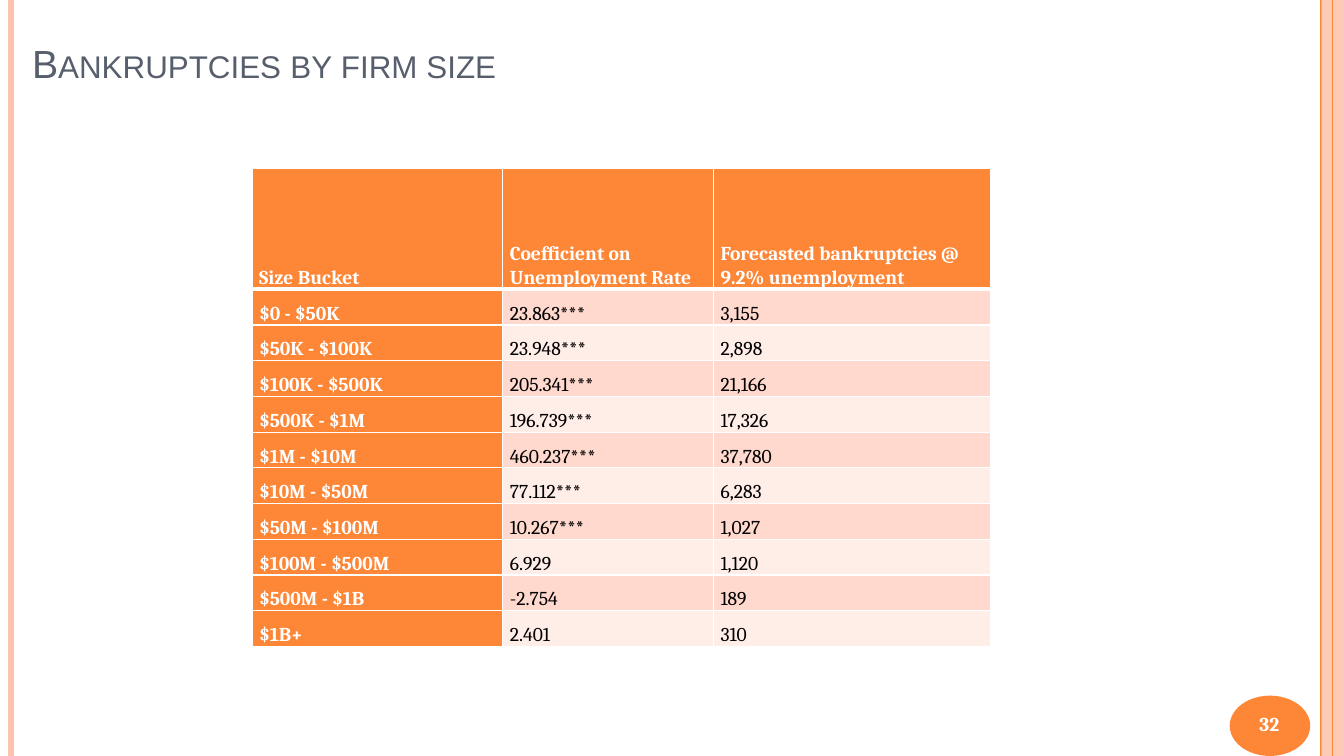
from collections import namedtuple

from lxml.etree import SubElement
from pptx import Presentation
from pptx.dml.color import RGBColor
from pptx.enum.shapes import MSO_CONNECTOR, MSO_SHAPE
from pptx.enum.text import MSO_ANCHOR as Anchor, PP_ALIGN as Align
from pptx.oxml import parse_xml
from pptx.oxml.ns import nsdecls, qn
from pptx.util import Cm, Pt

ORANGE = RGBColor(0xFE, 0x86, 0x37)
PEACH = RGBColor(0xFE, 0xC3, 0xAE)
ROW_DARK = RGBColor(0xFF, 0xD9, 0xCE)
ROW_LIGHT = RGBColor(0xFF, 0xED, 0xE8)
SLATE = RGBColor(0x57, 0x5F, 0x6D)
WHITE = RGBColor(0xFF, 0xFF, 0xFF)
BLACK = RGBColor(0, 0, 0)

Box = namedtuple("Box", "left top width height")
PAGE = Box(Cm(0), Cm(0), Cm(33.87), Cm(19.05))
TITLE = Box(Cm(0.56), Cm(0.33), Cm(32.18), Cm(1.98))
BADGE = Box(Cm(30.99), Cm(17.53), Cm(2.03), Cm(1.52))
TABLE = Box(Cm(6.35), Cm(4.24), Cm(18.62), Cm(12.05))

HEADER_HEIGHT = Cm(3.05)
COLUMN_WIDTHS = (Cm(6.32), Cm(5.31), Cm(6.99))
ROWS = (
    ("Size Bucket", "Coefficient on Unemployment Rate",
     "Forecasted bankruptcies @ 9.2% unemployment"),
    ("$0 - $50K", "23.863***", "3,155"),
    ("$50K - $100K", "23.948***", "2,898"),
    ("$100K - $500K", "205.341***", "21,166"),
    ("$500K - $1M", "196.739***", "17,326"),
    ("$1M - $10M", "460.237***", "37,780"),
    ("$10M - $50M", "77.112***", "6,283"),
    ("$50M - $100M", "10.267***", "1,027"),
    ("$100M - $500M", "6.929", "1,120"),
    ("$500M - $1B", "-2.754", "189"),
    ("$1B+", "2.401", "310"),
)


def write(frame, text, font, size, color, bold=False, anchor=Anchor.MIDDLE):
    """Fill a text frame with one formatted paragraph and return the paragraph."""
    frame.word_wrap = True
    frame.vertical_anchor = anchor
    para = frame.paragraphs[0]
    para.text = text
    for span in para.runs:
        span.font.name = font
        span.font.size = Pt(size)
        span.font.bold = bold
        span.font.color.rgb = color
    return para


def add_solid(page, kind, box, color):
    shape = page.shapes.add_shape(kind, *box)
    shape.shadow.inherit = False
    shape.fill.solid()
    shape.fill.fore_color.rgb = color
    shape.line.fill.background()
    return shape


def add_upright(page, box, x, color, width):
    """Draw a vertical line over the full height of the box."""
    line = page.shapes.add_connector(
        MSO_CONNECTOR.STRAIGHT, x, box.top, x, box.top + box.height)
    line.line.color.rgb = color
    line.line.width = Pt(width)
    SubElement(line._element.spPr, qn("a:effectLst"))


def add_side_bands(page, box):
    right = box.left + box.width
    band = Box(right - Cm(0.57), box.top, Cm(0.57), box.height)
    add_upright(page, box, box.left + Cm(0.28), PEACH, 4.5)
    add_upright(page, box, band.left, ORANGE, 1.5)
    shape = add_solid(page, MSO_SHAPE.RECTANGLE, band, PEACH)
    tint = shape._element.spPr.find(qn("a:solidFill"))[0]
    SubElement(tint, qn("a:alpha"), val="87000")
    add_upright(page, box, right - Cm(0.29), ORANGE, 0.75)


def add_title(page, box):
    frame = page.shapes.add_textbox(*box).text_frame
    para = write(frame, "Bankruptcies by firm size", "Arial", 28, SLATE,
                 anchor=Anchor.BOTTOM)
    para.runs[0].font._element.set("cap", "small")


def add_page_number(page, box):
    add_solid(page, MSO_SHAPE.OVAL, box, ORANGE)
    label = page.shapes.add_textbox(
        box.left - Cm(0.13), box.top - Cm(0.03), Cm(2.26), Cm(1.45))
    para = write(label.text_frame, "32", "Cambria", 14, WHITE, bold=True)
    para.alignment = Align.CENTER


def set_borders(cell, top, bottom):
    """Give the cell white borders, 1 pt at the sides."""
    widths = {"lnL": 1, "lnR": 1, "lnT": top, "lnB": bottom}
    for place, (tag, width) in enumerate(widths.items()):
        border = parse_xml(
            f'<a:{tag} {nsdecls("a")} w="{Pt(width)}"><a:solidFill>'
            f'<a:srgbClr val="{WHITE}"/></a:solidFill></a:{tag}>')
        cell._tc.get_or_add_tcPr().insert(place, border)


def fill_cell(cell, text, row, column):
    heading = row == 0 or column == 0
    cell.fill.solid()
    cell.fill.fore_color.rgb = (
        ORANGE if heading else ROW_DARK if row % 2 else ROW_LIGHT)
    cell.margin_left = cell.margin_right = Cm(0.18)
    cell.margin_top = cell.margin_bottom = 0
    para = write(cell.text_frame, text, "Cambria", 14,
                 WHITE if heading else BLACK, bold=heading)
    cell.vertical_anchor = Anchor.BOTTOM
    para.line_spacing = 1.07
    set_borders(cell, top=3 if row == 1 else 1, bottom=3 if row == 0 else 1)


def add_bankruptcy_table(page, box):
    table = page.shapes.add_table(len(ROWS), len(COLUMN_WIDTHS), *box).table
    for column, width in zip(table.columns, COLUMN_WIDTHS):
        column.width = width
    body_height = (box.height - HEADER_HEIGHT) // (len(ROWS) - 1)
    for row, texts in enumerate(ROWS):
        table.rows[row].height = body_height if row else HEADER_HEIGHT
        for column, text in enumerate(texts):
            fill_cell(table.cell(row, column), text, row, column)


def main():
    deck = Presentation()
    deck.slide_width, deck.slide_height = PAGE.width, PAGE.height
    page = deck.slides.add_slide(deck.slide_layouts[6])
    add_side_bands(page, PAGE)
    add_title(page, TITLE)
    add_page_number(page, BADGE)
    add_bankruptcy_table(page, TABLE)
    deck.save("out.pptx")


if __name__ == "__main__":
    main()
